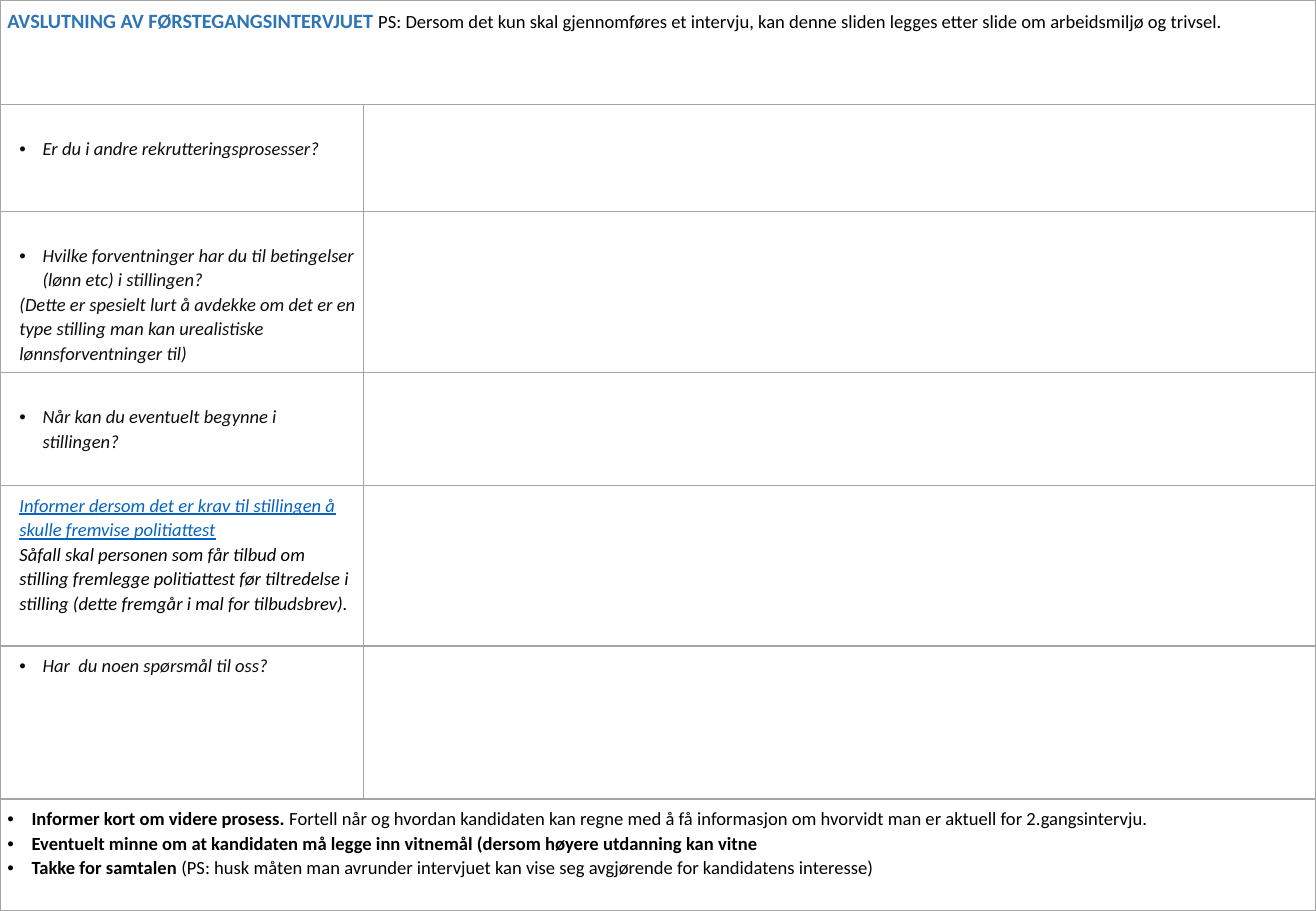
"""Builds the interview closing slide with one question table."""
from lxml.etree import SubElement
from pptx import Presentation
from pptx.dml.color import RGBColor as Color
from pptx.oxml.ns import qn
from pptx.util import Inches, Pt

COLORS = {"paper": "FFFFFF", "border": "A5A5A5", "title": "2E75B6",
          "black": "000000", "question": "0D0D0D", "link": "0563C1"}
WIDTH, HEIGHT = 10.83, 7.5
COLUMNS = [2.99, 7.84]
ROWS = [0.86, 0.88, 1.32, 0.93, 1.32, 1.26, 0.92]
MARGIN, LINE = 0.06, 0.2
BULLET, PLAIN, FULL = (0.29, -0.19, "•"), (0.1, 0, None), (0.2, -0.2, "•")

TITLE = [((0, 0, None), [
    ("AVSLUTNING AV FØRSTEGANGSINTERVJUET ", {"color": "title", "bold": True, "size": 12}),
    ("PS: Dersom det kun skal gjennomføres et intervju, kan denne sliden legges "
     "etter slide om arbeidsmiljø og trivsel.", {}),
])]
ASK = {"color": "question", "italic": True}
BOLD = {"bold": True}
QUESTIONS = [
    (1, [(BULLET, [("Er du i andre rekrutteringsprosesser?", ASK)])]),
    (1, [(BULLET, [("Hvilke forventninger har du til betingelser (lønn etc) i stillingen?", ASK)]),
         (PLAIN, [("(Dette er spesielt lurt å avdekke om det er en type stilling man kan "
                   "urealistiske lønnsforventninger til)", ASK)])]),
    (1, [(BULLET, [("Når kan du eventuelt begynne i stillingen?", ASK)])]),
    (0, [(PLAIN, [("Informer dersom det er krav til stillingen å skulle fremvise politiattest",
                   {"color": "link", "italic": True, "underline": True})]),
         (PLAIN, [("Såfall skal personen som får tilbud om stilling fremlegge politiattest før "
                   "tiltredelse i stilling (dette fremgår i mal for tilbudsbrev).",
                   {"italic": True})])]),
    (0, [(BULLET, [("Har  du noen spørsmål til oss?", ASK)])]),
]
CLOSING = [
    (FULL, [("Informer kort om videre prosess. ", BOLD),
            ("Fortell når og hvordan kandidaten kan regne med å få informasjon om "
             "hvorvidt man er aktuell for 2.gangsintervju.", {})]),
    (FULL, [("Eventuelt minne om at kandidaten må legge inn vitnemål "
             "(dersom høyere utdanning kan vitne", BOLD)]),
    (FULL, [("Takke for samtalen ", BOLD),
            ("(PS: husk måten man avrunder intervjuet kan vise seg avgjørende for "
             "kandidatens interesse)", {})]),
]


class SlideBuilder:
    """Holds the text style and the current slide."""

    def __init__(self, slide, font="Calibri", size=11, spacing=1.07):
        self.slide, self.font, self.size, self.spacing = slide, font, size, spacing

    def table(self, columns, rows):
        frame = self.slide.shapes.add_table(
            len(rows), len(columns), 0, 0, Inches(WIDTH), Inches(HEIGHT))
        table = frame.table
        table.first_row = table.horz_banding = False
        for column, width in zip(table.columns, columns):
            column.width = Inches(width)
        for row, height in zip(table.rows, rows):
            row.height = Inches(height)
        for cell in table.iter_cells():
            self.style_cell(cell)
        return table

    def style_cell(self, cell):
        cell.margin_left = cell.margin_right = Inches(MARGIN)
        cell.margin_top = cell.margin_bottom = Inches(MARGIN)
        properties = cell._tc.get_or_add_tcPr()
        for side in ("a:lnL", "a:lnR", "a:lnT", "a:lnB"):
            line = SubElement(properties, qn(side), w=str(Pt(1)))
            fill = SubElement(line, qn("a:solidFill"))
            SubElement(fill, qn("a:srgbClr"), val=COLORS["border"])
        cell.fill.solid()
        cell.fill.fore_color.rgb = Color.from_string(COLORS["paper"])

    def fill_cell(self, cell, paragraphs, lines_above=0):
        cell.margin_top = Inches(MARGIN + lines_above * LINE)
        frame = cell.text_frame
        for number, (layout, spans) in enumerate(paragraphs):
            para = frame.add_paragraph() if number else frame.paragraphs[0]
            para.line_spacing = self.spacing
            self.indent(para, *layout)
            for text, look in spans:
                self.span(para, text, **look)

    def indent(self, para, left, first, bullet):
        properties = para._p.get_or_add_pPr()
        properties.set("marL", str(Inches(left)))
        properties.set("indent", str(Inches(first)))
        if bullet:
            SubElement(properties, qn("a:buFont"), typeface="Arial")
            SubElement(properties, qn("a:buChar"), char=bullet)

    def span(self, para, text, color="black", size=None, bold=False, italic=False,
             underline=False):
        span = para.add_run()
        span.text = text
        font = span.font
        font.name, font.size = self.font, Pt(size or self.size)
        font.bold, font.italic, font.underline = bold, italic, underline
        font.color.rgb = Color.from_string(COLORS[color])


def main():
    deck = Presentation()
    deck.slide_width, deck.slide_height = Inches(WIDTH), Inches(HEIGHT)
    builder = SlideBuilder(deck.slides.add_slide(deck.slide_layouts[6]))
    table = builder.table(COLUMNS, ROWS)
    last = len(ROWS) - 1
    for row, paragraphs in ((0, TITLE), (last, CLOSING)):
        table.cell(row, 0).merge(table.cell(row, 1))
        builder.fill_cell(table.cell(row, 0), paragraphs)
    for row, (lines_above, paragraphs) in enumerate(QUESTIONS, start=1):
        builder.fill_cell(table.cell(row, 0), paragraphs, lines_above)
    deck.save("out.pptx")


if __name__ == "__main__":
    main()
